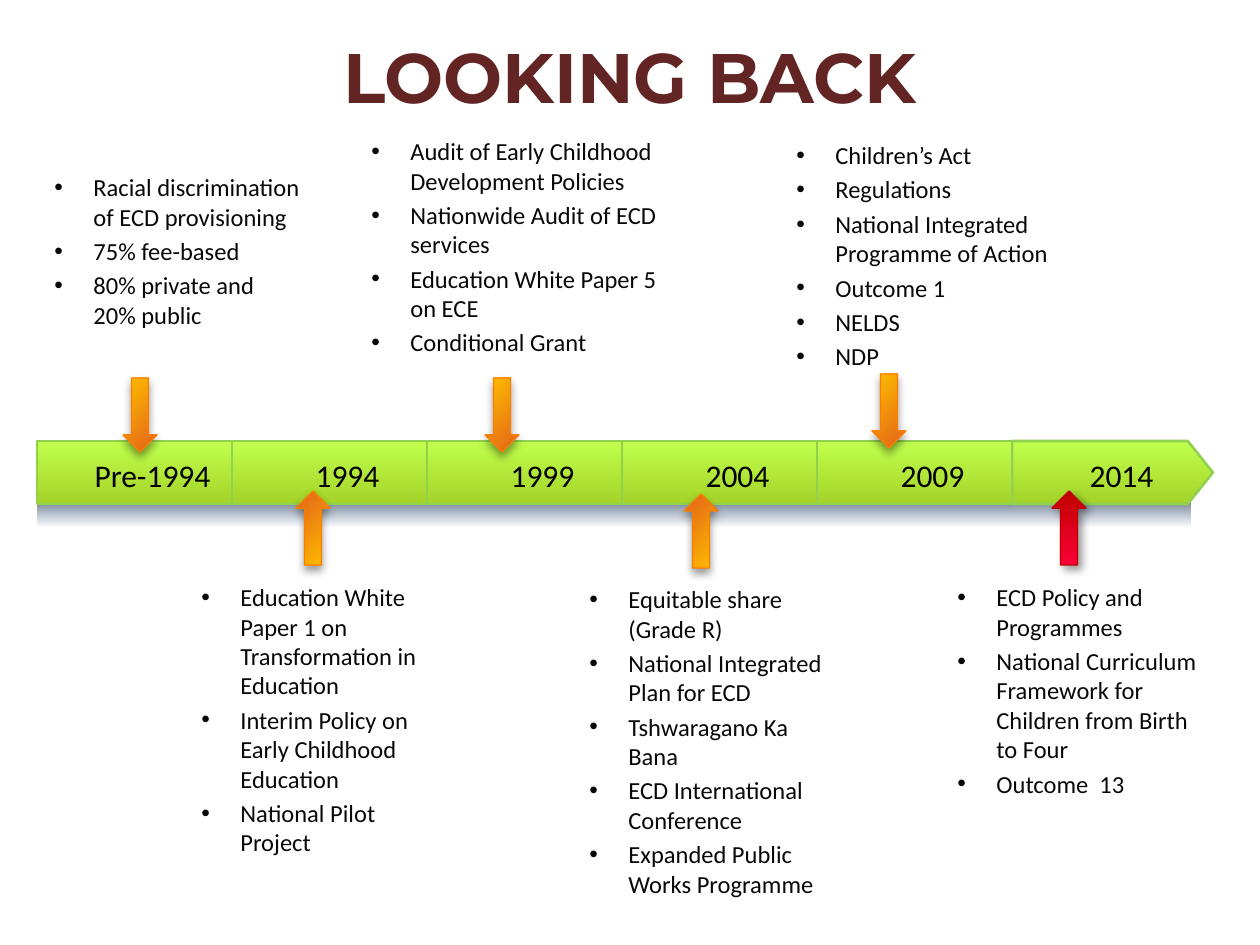
"""Build the LOOKING BACK policy timeline slide."""
import lxml.etree
import pptx
import pptx.dml.color
import pptx.enum.shapes
import pptx.enum.text
import pptx.oxml.ns
import pptx.util

SHAPES = pptx.enum.shapes.MSO_SHAPE
ALIGN = pptx.enum.text.PP_ALIGN
ANCHOR = pptx.enum.text.MSO_ANCHOR
FIT = pptx.enum.text.MSO_AUTO_SIZE
COLOURS = {
    "title": "632523", "label": "000000", "body": "080808",
    "band_top": "C0FF4D", "band_bottom": "A4D329", "band_line": "92D050",
    "amber": "FFC000", "orange": "E36119", "orange_line": "FC7E00",
    "red": "FB0036", "dark_red": "C00000",
    "shade_top": "070D13", "shade_bottom": "1F497D", "shadow": "000000",
}
BAND = ("band_top", "band_bottom", "band_line", 90)
ORANGE = ("amber", "orange", "orange_line", 45)
RED = ("red", "dark_red", "dark_red", 90)
YEARS = ["Pre-1994", "1994", "1999", "2004", "2009", "2014"]
BAND_LEFT, BAND_TOP, BAND_STEP, BAND_HEIGHT = 37, 441, 195, 63
CALLOUTS = [
    ((42, 166, 270, 203), (123, 378), False, ORANGE, [
        "Racial discrimination of ECD provisioning", "75% fee-based",
        "80% private and 20% public"]),
    ((359, 130, 323, 238), (485, 378), False, ORANGE, [
        "Audit of Early Childhood Development Policies",
        "Nationwide Audit of ECD services",
        "Education White Paper 5 on ECE", "Conditional Grant"]),
    ((784, 134, 295, 251), (872, 374), False, ORANGE, [
        "Children’s Act", "Regulations",
        "National Integrated Programme of Action", "Outcome 1", "NELDS", "NDP"]),
    ((189, 576, 270, 292), (296, 491), True, ORANGE, [
        "Education White Paper 1 on Transformation in Education",
        "Interim Policy on Early Childhood Education", "National Pilot Project"]),
    ((577, 578, 270, 334), (684, 494), True, ORANGE, [
        "Equitable share (Grade R)", "National Integrated Plan for ECD",
        "Tshwaragano Ka Bana", "ECD International Conference",
        "Expanded Public Works Programme"]),
    ((945, 576, 270, 232), (1052, 491), True, RED, [
        "ECD Policy and Programmes",
        "National Curriculum Framework for Children from Birth to Four",
        "Outcome  13"]),
]


def px(length):
    return pptx.util.Emu(round(length * 914400 / 126))


def colour(name):
    return pptx.dml.color.RGBColor.from_string(COLOURS[name])


def apply(target, values):
    for name, value in values.items():
        setattr(target, name, value)


def add_element(parent, tag, **attributes):
    values = {name: str(value) for name, value in attributes.items()}
    return lxml.etree.SubElement(parent, pptx.oxml.ns.qn(tag), values)


class TimelineSlide:
    """Holds the text styles and the slide being drawn."""

    fonts = {
        "title": {"name": "Montserrat", "size": pptx.util.Pt(40), "bold": True},
        "label": {"name": "Calibri", "size": pptx.util.Pt(18)},
        "body": {"name": "Calibri", "size": pptx.util.Pt(14)},
    }
    frames = {
        "title": {"word_wrap": True, "vertical_anchor": ANCHOR.MIDDLE,
                  "margin_left": 0, "margin_right": 0},
        "label": {"word_wrap": True, "vertical_anchor": ANCHOR.MIDDLE},
        "body": {"word_wrap": True, "auto_size": FIT.SHAPE_TO_FIT_TEXT},
    }

    def __init__(self, presentation):
        self.slide = presentation.slides.add_slide(presentation.slide_layouts[6])

    def gradient_shape(self, kind, box, first, last, angle):
        shape = self.slide.shapes.add_shape(kind, *map(px, box))
        shape.fill.gradient()
        shape.fill.gradient_angle = 360 - angle
        for stop, name in zip(shape.fill.gradient_stops, (first, last)):
            stop.color.rgb = colour(name)
        shape.line.fill.background()
        shape.shadow.inherit = False
        return shape

    def outlined_shape(self, kind, box, style, width):
        first, last, line, angle = style
        shape = self.gradient_shape(kind, box, first, last, angle)
        shape.line.color.rgb = colour(line)
        shape.line.width = pptx.util.Pt(width)
        return shape

    def shade(self, box):
        shape = self.gradient_shape(
            SHAPES.RECTANGLE, box, "shade_top", "shade_bottom", 90)
        last_colour = list(shape.element.iter(pptx.oxml.ns.qn("a:srgbClr")))[-1]
        add_element(last_colour, "a:alpha", val=0)

    def band(self, box, pointed):
        kind = SHAPES.PENTAGON if pointed else SHAPES.RECTANGLE
        shape = self.outlined_shape(kind, box, BAND, 1.5)
        if pointed:
            shape.adjustments[0] = 0.4

    def arrow(self, left, top, upward, style):
        shape = self.outlined_shape(
            SHAPES.DOWN_ARROW, (left, top, 34, 74), style, 0.75)
        shape.rotation = 180 if upward else 0
        effects = shape.element.spPr.find(pptx.oxml.ns.qn("a:effectLst"))
        direction = 45 if style is RED else 90
        shadow = add_element(
            effects, "a:outerShdw", blurRad=pptx.util.Pt(5),
            dist=pptx.util.Pt(3), dir=direction * 60000, rotWithShape=0)
        shadow_colour = add_element(shadow, "a:srgbClr", val=COLOURS["shadow"])
        add_element(shadow_colour, "a:alpha", val=40000)

    def text(self, box, lines, style):
        frame = self.slide.shapes.add_textbox(*map(px, box)).text_frame
        apply(frame, self.frames[style])
        for index, line in enumerate(lines):
            paragraph = frame.add_paragraph() if index else frame.paragraphs[0]
            paragraph.text = line
            if style == "body":
                self.bullet(paragraph, index)
            else:
                paragraph.alignment = ALIGN.CENTER
            apply(paragraph.font, self.fonts[style])
            paragraph.font.color.rgb = colour(style)

    def bullet(self, paragraph, index):
        if index:
            paragraph.space_before = pptx.util.Pt(2.8)
        properties = paragraph._p.get_or_add_pPr()
        properties.set("marL", str(px(39)))
        properties.set("indent", str(-px(39)))
        add_element(properties, "a:buFont", typeface="Arial")
        add_element(properties, "a:buChar", char="•")


def main():
    presentation = pptx.Presentation()
    presentation.slide_width, presentation.slide_height = px(1260), px(945)
    timeline = TimelineSlide(presentation)
    timeline.shade((38, 483, 1153, 44))
    last = len(YEARS) - 1
    lefts = [BAND_LEFT + BAND_STEP * index for index in range(len(YEARS))]
    for index in reversed(range(len(YEARS))):
        width = 201 if index == last else BAND_STEP
        timeline.band((lefts[index], BAND_TOP, width, BAND_HEIGHT), index == last)
    for index, year in enumerate(YEARS):
        offset = 12 if index == last else 18
        timeline.text((lefts[index] + offset, 454, BAND_STEP, 42), [year], "label")
    for box, (left, top), upward, style, lines in CALLOUTS:
        timeline.text(box, lines, "body")
        timeline.arrow(left, top, upward, style)
    timeline.text((0, 16, 1260, 118), ["LOOKING BACK"], "title")
    presentation.save("out.pptx")


if __name__ == "__main__":
    main()
